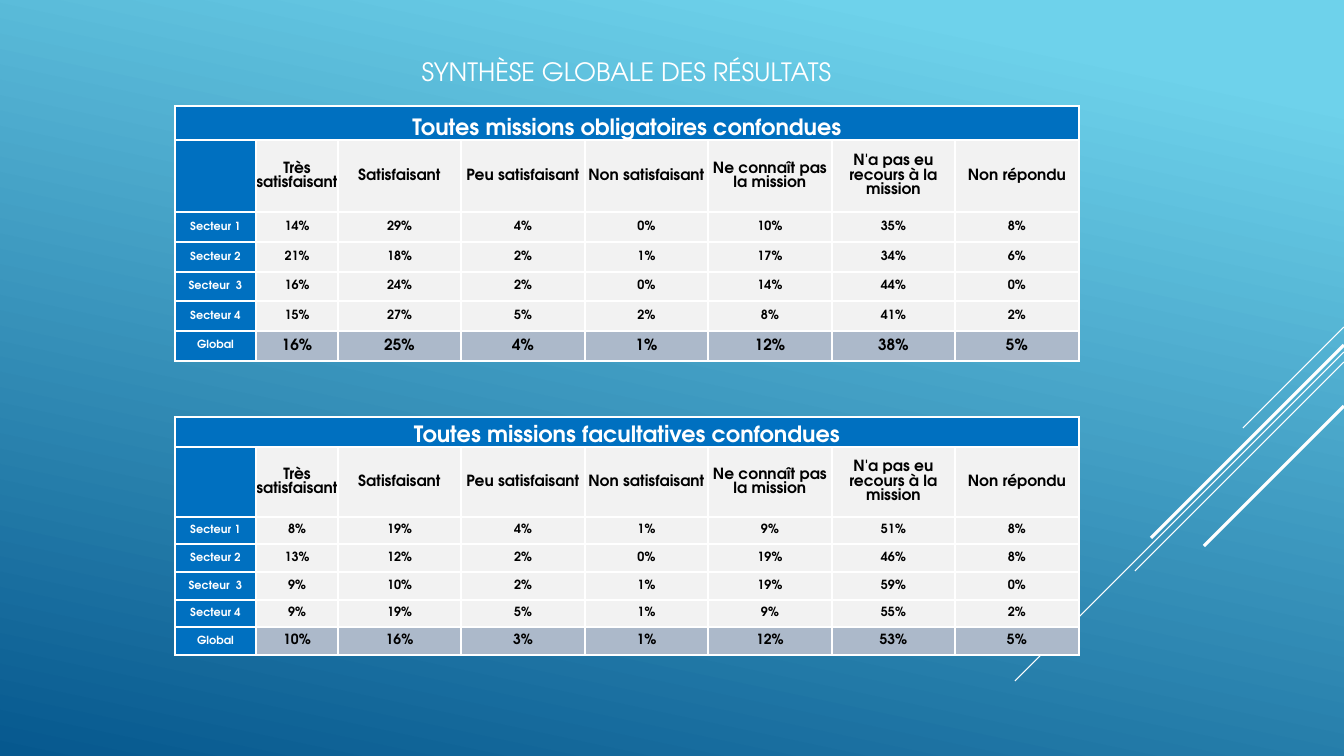
from dataclasses import dataclass

from lxml import etree
from pptx import Presentation
from pptx.dml.color import RGBColor
from pptx.enum.shapes import MSO_CONNECTOR
from pptx.enum.text import MSO_ANCHOR, PP_ALIGN
from pptx.oxml import parse_xml
from pptx.oxml.ns import nsdecls, qn
from pptx.util import Emu, Pt

STRAIGHT = MSO_CONNECTOR.STRAIGHT
MIDDLE, BOTTOM = MSO_ANCHOR.MIDDLE, MSO_ANCHOR.BOTTOM
CENTER = PP_ALIGN.CENTER
TITLE_ONLY = 5


@dataclass(frozen=True)
class Theme:
    font: str = "TeX Gyre Adventor"
    sky: str = "6ED2EB"
    deep: str = "06588E"
    white: str = "FFFFFF"
    black: str = "000000"
    blue: str = "0070C0"
    pale: str = "F2F2F2"
    slate: str = "ACB9CA"
    title_size: int = 18
    banner_size: int = 16
    heading_size: int = 11
    sector_size: int = 8
    value_size: int = 9
    border: float = 1.5


THEME = Theme()

COLUMN_WIDTHS = [81, 82] + [123, 124] * 3
HEADINGS = ["Très satisfaisant", "Satisfaisant", "Peu satisfaisant",
            "Non satisfaisant", "Ne connaît pas la mission",
            "N'a pas eu recours à la mission", "Non répondu"]
ROW_NAMES = ["Secteur 1", "Secteur 2", "Secteur  3", "Secteur 4", "Global"]
MANDATORY = [[14, 29, 4, 0, 10, 35, 8],
             [21, 18, 2, 1, 17, 34, 6],
             [16, 24, 2, 0, 14, 44, 0],
             [15, 27, 5, 2, 8, 41, 2],
             [16, 25, 4, 1, 12, 38, 5]]
OPTIONAL = [[8, 19, 4, 1, 9, 51, 8],
            [13, 12, 2, 0, 19, 46, 8],
            [9, 10, 2, 1, 19, 59, 0],
            [9, 19, 5, 1, 9, 55, 2],
            [10, 16, 3, 1, 12, 53, 5]]

# Diagonals at 45 degrees: start height on the right edge, run, line width
DIAGONALS = [(327, 101, 0.75), (352, 329, 0.75), (362, 209, 0.75),
             (345, 193, 2.25), (406, 140, 2.25)]
PAGE_WIDTH, PAGE_HEIGHT = 1344, 756


def px(length):
    return Emu(round(length * 914400 / 100.8))


def rgb(color):
    return RGBColor.from_string(color)


def format_text(frame, size, color, bold):
    for para in frame.paragraphs:
        para.alignment = CENTER
        para.line_spacing = 1.0
        for span in para.runs:
            span.font.name = THEME.font
            span.font.size = Pt(size)
            span.font.bold = bold
            span.font.color.rgb = rgb(color)


def paint_background(page):
    fill = page.background.fill
    fill.gradient()
    fill.gradient_angle = 258
    stops = [(0.1, THEME.sky), (1, THEME.deep)]
    for stop, (position, color) in zip(fill.gradient_stops, stops):
        stop.position = position
        stop.color.rgb = rgb(color)


def add_diagonal(page, top, run, width):
    line = page.shapes.add_connector(STRAIGHT, px(PAGE_WIDTH), px(top),
                                     px(PAGE_WIDTH - run), px(top + run))
    line.line.color.rgb = rgb(THEME.white)
    line.line.width = Pt(width)
    etree.SubElement(line._element.spPr, qn("a:effectLst"))


def set_title(page, text):
    title = page.shapes.title
    title.left, title.top = px(156), px(22)
    title.width, title.height = px(941), px(98)
    title.text_frame.text = text
    title.text_frame.vertical_anchor = MIDDLE
    format_text(title.text_frame, THEME.title_size, THEME.white, False)


def add_borders(cell):
    properties = cell._tc.get_or_add_tcPr()
    for side in ("lnL", "lnR", "lnT", "lnB"):
        properties.append(parse_xml(
            f'<a:{side} {nsdecls("a")} w="{Pt(THEME.border)}"><a:solidFill>'
            f'<a:srgbClr val="{THEME.white}"/></a:solidFill></a:{side}>'))


def fill_cell(cell, text, fill, size, color, anchor=MIDDLE):
    add_borders(cell)
    cell.fill.solid()
    cell.fill.fore_color.rgb = rgb(fill)
    cell.margin_left = cell.margin_right = 0
    cell.margin_top = cell.margin_bottom = 0
    cell.vertical_anchor = anchor
    cell.text_frame.text = text
    format_text(cell.text_frame, size, color, True)


def add_results(page, top, row_heights, banner, values, total_size):
    frame = page.shapes.add_table(
        len(row_heights), len(COLUMN_WIDTHS), px(175), px(top),
        px(sum(COLUMN_WIDTHS)), px(sum(row_heights)))
    table = frame.table
    for column, width in zip(table.columns, COLUMN_WIDTHS):
        column.width = px(width)
    for row, height in zip(table.rows, row_heights):
        row.height = px(height)

    # Banner across all columns
    table.cell(0, 0).merge(table.cell(0, len(COLUMN_WIDTHS) - 1))
    for column in range(len(COLUMN_WIDTHS)):
        fill_cell(table.cell(0, column), "" if column else banner, THEME.blue,
                  THEME.banner_size, THEME.white, BOTTOM)

    # Column headings
    fill_cell(table.cell(1, 0), "", THEME.blue, THEME.sector_size, THEME.white)
    for column, heading in enumerate(HEADINGS, 1):
        fill_cell(table.cell(1, column), heading, THEME.pale,
                  THEME.heading_size, THEME.black)

    # Sectors and overall row
    for row, (name, shares) in enumerate(zip(ROW_NAMES, values), 2):
        is_total = name == "Global"
        fill = THEME.slate if is_total else THEME.pale
        size = total_size if is_total else THEME.value_size
        fill_cell(table.cell(row, 0), name, THEME.blue, THEME.sector_size,
                  THEME.white)
        for column, share in enumerate(shares, 1):
            fill_cell(table.cell(row, column), f"{share}%", fill, size,
                      THEME.black)


def main():
    deck = Presentation()
    deck.slide_width, deck.slide_height = px(PAGE_WIDTH), px(PAGE_HEIGHT)
    page = deck.slides.add_slide(deck.slide_layouts[TITLE_ONLY])
    paint_background(page)
    for diagonal in DIAGONALS:
        add_diagonal(page, *diagonal)
    set_title(page, "SYNTHÈSE GLOBALE DES RÉSULTATS")
    add_results(page, 106, [34, 72, 30, 30, 29, 30, 30],
                "Toutes missions obligatoires confondues", MANDATORY, 11)
    add_results(page, 417, [30, 70, 27, 28, 28, 27, 28],
                "Toutes missions facultatives confondues", OPTIONAL, 10)
    deck.save("out.pptx")


if __name__ == "__main__":
    main()
